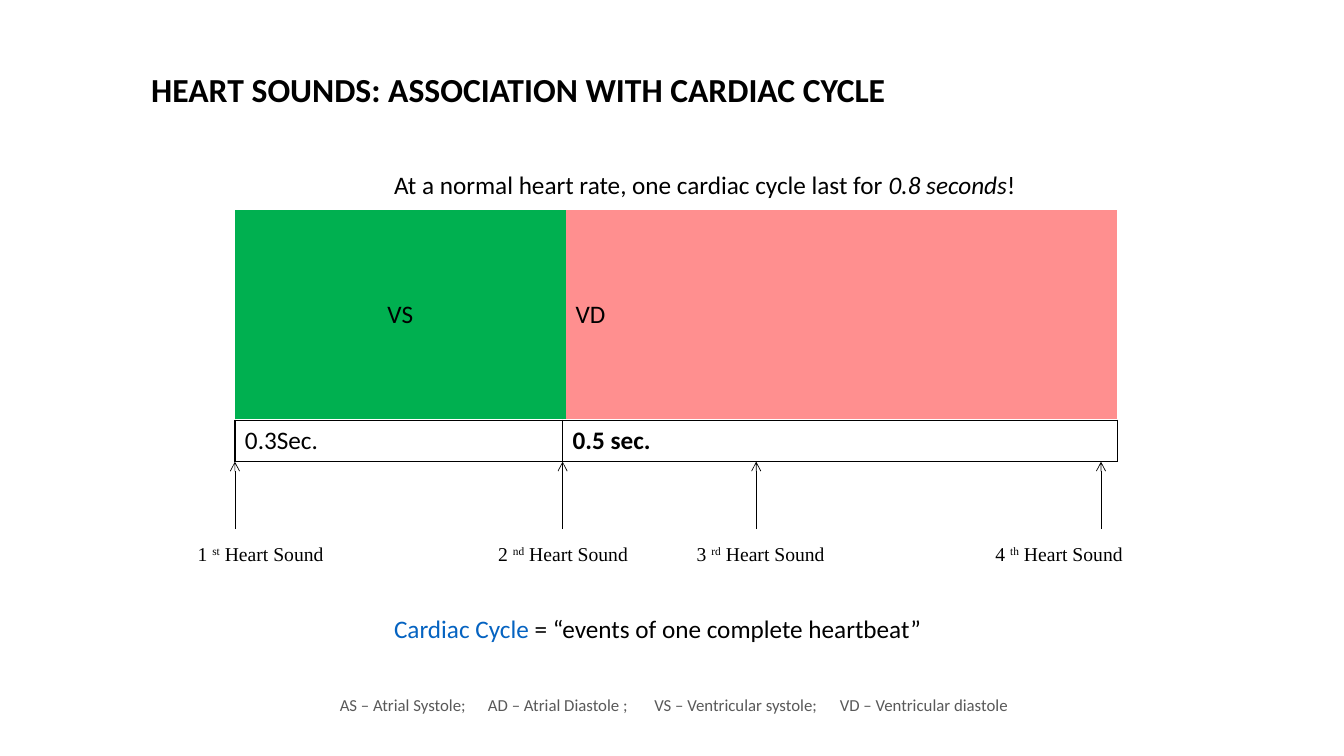
from dataclasses import dataclass, field
from typing import Any

import pptx
import pptx.dml.color
import pptx.enum.shapes
import pptx.enum.text
import pptx.oxml
import pptx.oxml.ns
import pptx.util
from pptx.util import Inches

ALIGN = pptx.enum.text.PP_ALIGN
ANCHOR = pptx.enum.text.MSO_ANCHOR
AUTO_SIZE = pptx.enum.text.MSO_AUTO_SIZE
NO_STYLE = "{2D5ABB26-0587-4C30-8999-92F81FD0307C}"


@dataclass(frozen=True)
class Theme:
    sans: str = "Calibri"
    serif: str = "Times New Roman"
    black: str = "000000"
    muted: str = "595959"
    accent: str = "0563C1"
    systole: str = "00B050"
    diastole: str = "FF8F8F"
    title: int = 24
    body: int = 18
    label: int = 14
    legend: int = 12


THEME = Theme()


@dataclass(frozen=True)
class Span:
    text: str
    format: dict[str, Any] = field(default_factory=dict)
    color: str = THEME.black
    superscript: bool = False


@dataclass(frozen=True)
class Cell:
    span: Span
    width: float
    fill: str = ""
    align: Any = ALIGN.LEFT


@dataclass(frozen=True)
class HeartSound:
    number: str
    suffix: str
    arrow: float
    label_left: float
    label_width: float = 1.67


def style(target: Any, values: dict[str, Any]) -> None:
    for name, value in values.items():
        setattr(target, name, value)


def write(para: Any, spans: list[Span], size: int, font: str = THEME.sans) -> None:
    for part in spans:
        span = para.add_run()
        span.text = part.text
        style(span.font, {"name": font, "size": pptx.util.Pt(size), **part.format})
        span.font.color.rgb = pptx.dml.color.RGBColor.from_string(part.color)
        if part.superscript:
            span.font._element.set("baseline", "30000")


def add_text(page: Any, place: tuple, spans: list[Span], size: int,
             font: str = THEME.sans, **para_format: Any) -> None:
    box = page.shapes.add_textbox(*map(Inches, place))
    style(box.text_frame, {"word_wrap": True, "auto_size": AUTO_SIZE.SHAPE_TO_FIT_TEXT})
    para = box.text_frame.paragraphs[0]
    style(para, para_format)
    write(para, spans, size, font)


def add_border(cell: Any) -> None:
    properties = cell._tc.get_or_add_tcPr()
    for side in "LRTB":
        properties.append(pptx.oxml.parse_xml(
            f'<a:ln{side} {pptx.oxml.ns.nsdecls("a")} w="12700"><a:solidFill>'
            f'<a:srgbClr val="{THEME.black}"/></a:solidFill></a:ln{side}>'))


def add_row(page: Any, left: float, top: float, height: float, cells: list[Cell],
            size: int, bordered: bool = False) -> Any:
    width = sum(cell.width for cell in cells)
    frame = page.shapes.add_table(1, len(cells), *map(Inches, (left, top, width, height)))
    table = frame.table
    style(table, {"first_row": False, "horz_banding": False})
    table._tbl.tblPr.find(pptx.oxml.ns.qn("a:tableStyleId")).text = NO_STYLE
    table.rows[0].height = Inches(height)
    for index, item in enumerate(cells):
        table.columns[index].width = Inches(item.width)
        cell = table.cell(0, index)
        cell.vertical_anchor = ANCHOR.MIDDLE
        if bordered:
            add_border(cell)
        if item.fill:
            cell.fill.solid()
            cell.fill.fore_color.rgb = pptx.dml.color.RGBColor.from_string(item.fill)
        else:
            cell.fill.background()
        para = cell.text_frame.paragraphs[0]
        para.alignment = item.align
        write(para, [item.span], size)
    return table


def add_tabs(para: Any, stops: list[float]) -> None:
    tabs = "".join(f'<a:tab pos="{Inches(stop)}" algn="l"/>' for stop in stops)
    para._p.get_or_add_pPr().append(pptx.oxml.parse_xml(
        f'<a:tabLst {pptx.oxml.ns.nsdecls("a")}>{tabs}</a:tabLst>'))


def add_arrow(page: Any, x: float, bottom: float, top: float) -> None:
    arrow = page.shapes.add_connector(pptx.enum.shapes.MSO_CONNECTOR.STRAIGHT,
                                      *map(Inches, (x, bottom, x, top)))
    arrow.line.width = pptx.util.Pt(0.5)
    arrow.line.color.rgb = pptx.dml.color.RGBColor.from_string(THEME.black)
    namespace = pptx.oxml.ns.nsdecls("a")
    arrow.line._get_or_add_ln().append(
        pptx.oxml.parse_xml(f'<a:tailEnd {namespace} type="arrow"/>'))
    arrow._element.spPr.append(pptx.oxml.parse_xml(f"<a:effectLst {namespace}/>"))


def main() -> None:
    deck = pptx.Presentation()
    style(deck, {"slide_width": Inches(13.33), "slide_height": Inches(7.5)})
    page = deck.slides.add_slide(deck.slide_layouts[5])

    # Title
    title = page.shapes.title
    style(title, {"left": Inches(1.4), "top": Inches(0.47),
                  "width": Inches(7.94), "height": Inches(0.87)})
    style(title.text_frame, {"vertical_anchor": ANCHOR.MIDDLE, "word_wrap": True,
                             "auto_size": AUTO_SIZE.NONE})
    heading = title.text_frame.paragraphs[0]
    style(heading, {"alignment": ALIGN.LEFT, "line_spacing": 0.9})
    write(heading, [Span("HEART SOUNDS: ASSOCIATION WITH CARDIAC CYCLE", {"bold": True})],
          THEME.title)

    # Cycle phases and their durations
    add_row(page, 2.33, 2.08, 2.08, [
        Cell(Span("VS"), 3.28, THEME.systole, ALIGN.CENTER),
        Cell(Span("VD"), 5.47, THEME.diastole)], THEME.body)
    add_row(page, 2.33, 4.17, 0.4, [
        Cell(Span("0.3Sec."), 3.25),
        Cell(Span("0.5 sec.", {"bold": True}), 5.5)], THEME.body, bordered=True)

    # Heart sounds
    for sound in (HeartSound("1", "st", 2.33, 1.75), HeartSound("2", "nd", 5.58, 4.75),
                  HeartSound("3", "rd", 7.5, 6.67, 1.75), HeartSound("4", "th", 10.92, 9.67)):
        add_text(page, (sound.label_left, 5.33, sound.label_width, 0.34),
                 [Span(f"{sound.number} "), Span(sound.suffix, superscript=True),
                  Span(" Heart Sound")],
                 THEME.label, THEME.serif, alignment=ALIGN.CENTER)
        add_arrow(page, sound.arrow, 5.25, 4.58)

    # Abbreviations, spaced by tab stops
    legend = add_row(page, 2, 6.84, 0.32, [Cell(Span(
        "AS – Atrial Systole;\tAD – Atrial Diastole ;\tVS – Ventricular systole;"
        "\tVD – Ventricular diastole", color=THEME.muted), 9.42)], THEME.legend)
    legend.cell(0, 0).margin_left = Inches(1.37)
    add_tabs(legend.cell(0, 0).text_frame.paragraphs[0], [1.47, 3.12, 4.96])

    # Statements above and below the diagram
    add_text(page, (3.81, 1.63, 6.66, 0.4),
             [Span("At a normal heart rate, one cardiac cycle last for "),
              Span("0.8 seconds", {"italic": True}), Span("!")], THEME.body)
    add_text(page, (3.81, 6.07, 6.69, 0.37),
             [Span("Cardiac Cycle", color=THEME.accent),
              Span(" = “events of one complete heartbeat”")],
             THEME.body, line_spacing=0.9)

    deck.save("out.pptx")


if __name__ == "__main__":
    main()
